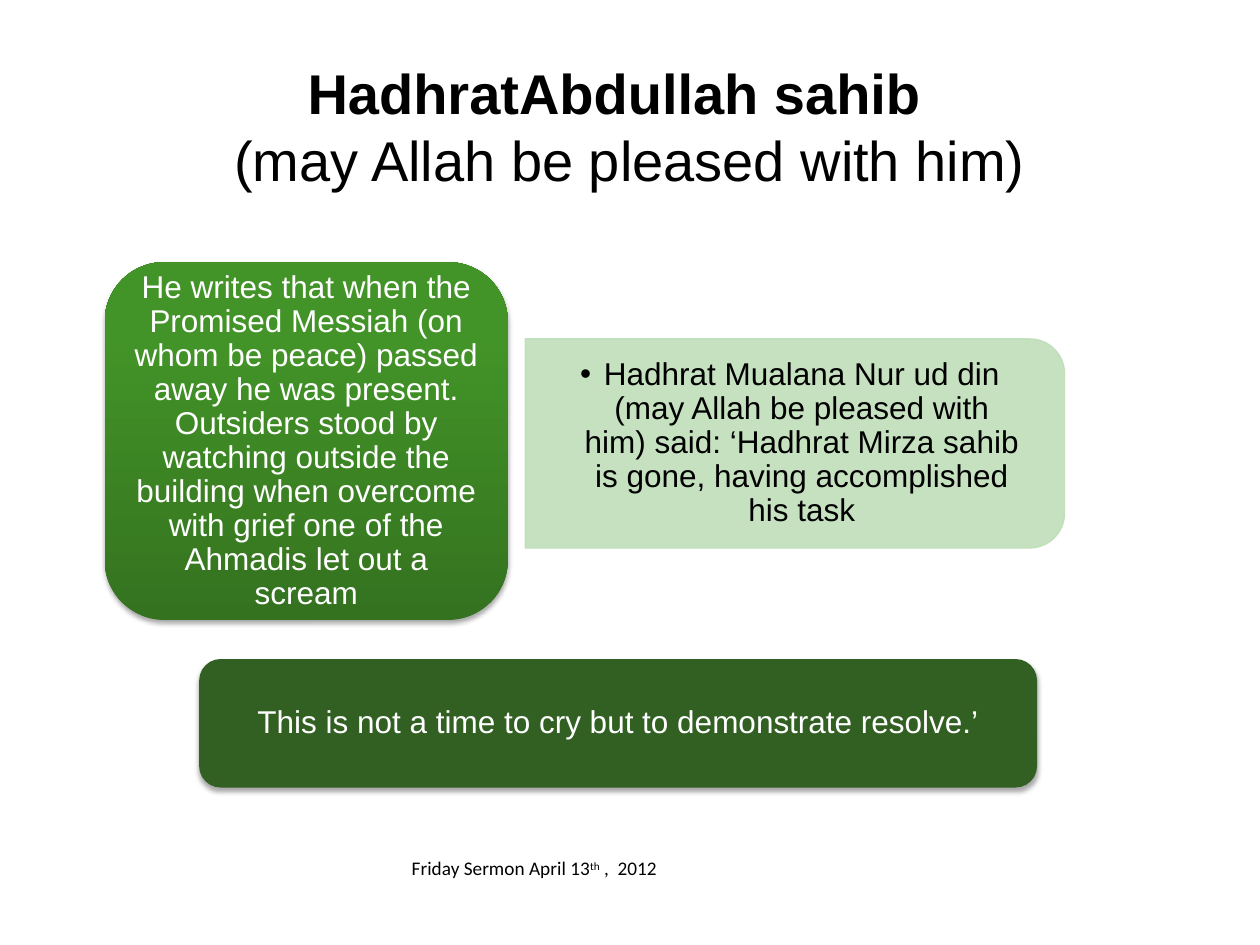
from lxml import etree
from pptx import Presentation
from pptx.dml.color import RGBColor
from pptx.enum import shapes, text
from pptx.oxml.ns import qn
from pptx.util import Pt

BLACK = RGBColor(0x00, 0x00, 0x00)
WHITE = RGBColor(0xFF, 0xFF, 0xFF)
PALE_GREEN = RGBColor(0xBF, 0xDE, 0xB9)
DEEP_GREEN = RGBColor(0x34, 0x72, 0x1F)
BRIGHT_GREEN = RGBColor(0x43, 0x94, 0x28)
DARK_GREEN = RGBColor(0x32, 0x60, 0x23)


def write(shape, runs, font, margins, anchor, align=text.PP_ALIGN.CENTER, spacing=None):
    """Fill the shape with one paragraph of (wording, extra font values) runs."""
    frame = shape.text_frame
    side, top = margins
    frame_format = dict(word_wrap=True, vertical_anchor=anchor,
                        margin_left=Pt(side), margin_right=Pt(side),
                        margin_top=Pt(top), margin_bottom=Pt(top))
    for name, value in frame_format.items():
        setattr(frame, name, value)
    paragraph = frame.paragraphs[0]
    paragraph.alignment = align
    paragraph.line_spacing = spacing
    for wording, extra in runs:
        if paragraph.runs and wording.startswith("("):
            paragraph.add_line_break()
        run = paragraph.add_run()
        run.text = wording
        values = {**font, **extra}
        run.font.color.rgb = values.pop("color")
        for name, value in values.items():
            setattr(run.font, name, value)
    return paragraph


def add_soft_shadow(shape):
    effects = shape._element.spPr.find(qn("a:effectLst"))
    shadow = etree.SubElement(effects, qn("a:outerShdw"), blurRad=str(Pt(3.1)),
                              dist=str(Pt(1.8)), dir="5400000", rotWithShape="0")
    color = etree.SubElement(shadow, qn("a:srgbClr"), val="000000")
    etree.SubElement(color, qn("a:alpha"), val="35000")


presentation = Presentation()
presentation.slide_width, presentation.slide_height = Pt(720), Pt(540)
slide = presentation.slides.add_slide(presentation.slide_layouts[6])

MIDDLE = text.MSO_ANCHOR.MIDDLE
body_font = dict(name="Arial", size=Pt(18), color=WHITE)

# Title
title = slide.shapes.add_textbox(Pt(36), Pt(36), Pt(648), Pt(72))
write(title, [("HadhratAbdullah sahib  ", {"bold": True}),
              ("(may Allah be pleased with him)", {"bold": False})],
      dict(name="Arial", size=Pt(32), color=BLACK), (0, 0), MIDDLE)

# Quotation panel: a rectangle turned so that its rounded corners face right
panel = slide.shapes.add_shape(shapes.MSO_SHAPE.ROUND_2_SAME_RECTANGLE,
                               Pt(394.5), Pt(99.3), Pt(119.5), Pt(308.2))
panel.rotation = 90
panel.shadow.inherit = False
panel.fill.solid()
panel.fill.fore_color.rgb = PALE_GREEN
panel.line.color.rgb = PALE_GREEN
panel.line.width = Pt(0.75)
for color in panel._element.spPr.iter(qn("a:srgbClr")):
    etree.SubElement(color, qn("a:alpha"), val="90000")

quotation = slide.shapes.add_textbox(Pt(300.2), Pt(199.4), Pt(302.4), Pt(108))
paragraph = write(quotation, [("Hadhrat Mualana Nur ud din (may Allah be pleased with him) said: "
                               "‘Hadhrat Mirza sahib is gone, having accomplished his task", {})],
                  {**body_font, "color": BLACK}, (19.4, 10), MIDDLE, spacing=0.9)
properties = paragraph._p.get_or_add_pPr()
properties.set("marL", str(Pt(13.5)))
properties.set("indent", str(Pt(-13.5)))
etree.SubElement(properties, qn("a:buFont"), typeface="Arial")
etree.SubElement(properties, qn("a:buChar"), char="•")

# Green cards
cards = [
    ((59.8, 149.8, 230.4, 204.5),
     "He writes that when the Promised Messiah (on whom be peace) passed away he was present. "
     "Outsiders stood by watching outside the building when overcome with grief one of the "
     "Ahmadis let out a scream"),
    ((113.8, 376.6, 478.8, 73.4), "This is not a time to cry but to demonstrate resolve.’"),
]
card_shapes = []
for box, wording in cards:
    card = slide.shapes.add_shape(shapes.MSO_SHAPE.ROUNDED_RECTANGLE, *map(Pt, box))
    card.shadow.inherit = False
    card.line.fill.background()
    add_soft_shadow(card)
    write(card, [(wording, {})], body_font, (5, 3), MIDDLE, spacing=0.9)
    card_shapes.append(card)

story_card, resolve_card = card_shapes
story_card.fill.gradient()
story_card.fill.gradient_angle = 90
stops = story_card.fill.gradient_stops
for stop, position, color in zip(stops, (0, 0.8), (DEEP_GREEN, BRIGHT_GREEN)):
    stop.position = position
    stop.color.rgb = color
resolve_card.fill.solid()
resolve_card.fill.fore_color.rgb = DARK_GREEN

# Footer
footer = slide.shapes.add_textbox(Pt(228.2), Pt(486), Pt(246.2), Pt(20.9))
paragraph = write(footer, [("Friday Sermon April 13", {}), ("th", {}), (" ,  2012", {})],
                  dict(name="Calibri", size=Pt(11), color=BLACK), (7.2, 3.6),
                  text.MSO_ANCHOR.TOP, text.PP_ALIGN.LEFT)
paragraph.runs[1]._r.get_or_add_rPr().set("baseline", "30000")

presentation.save("out.pptx")
